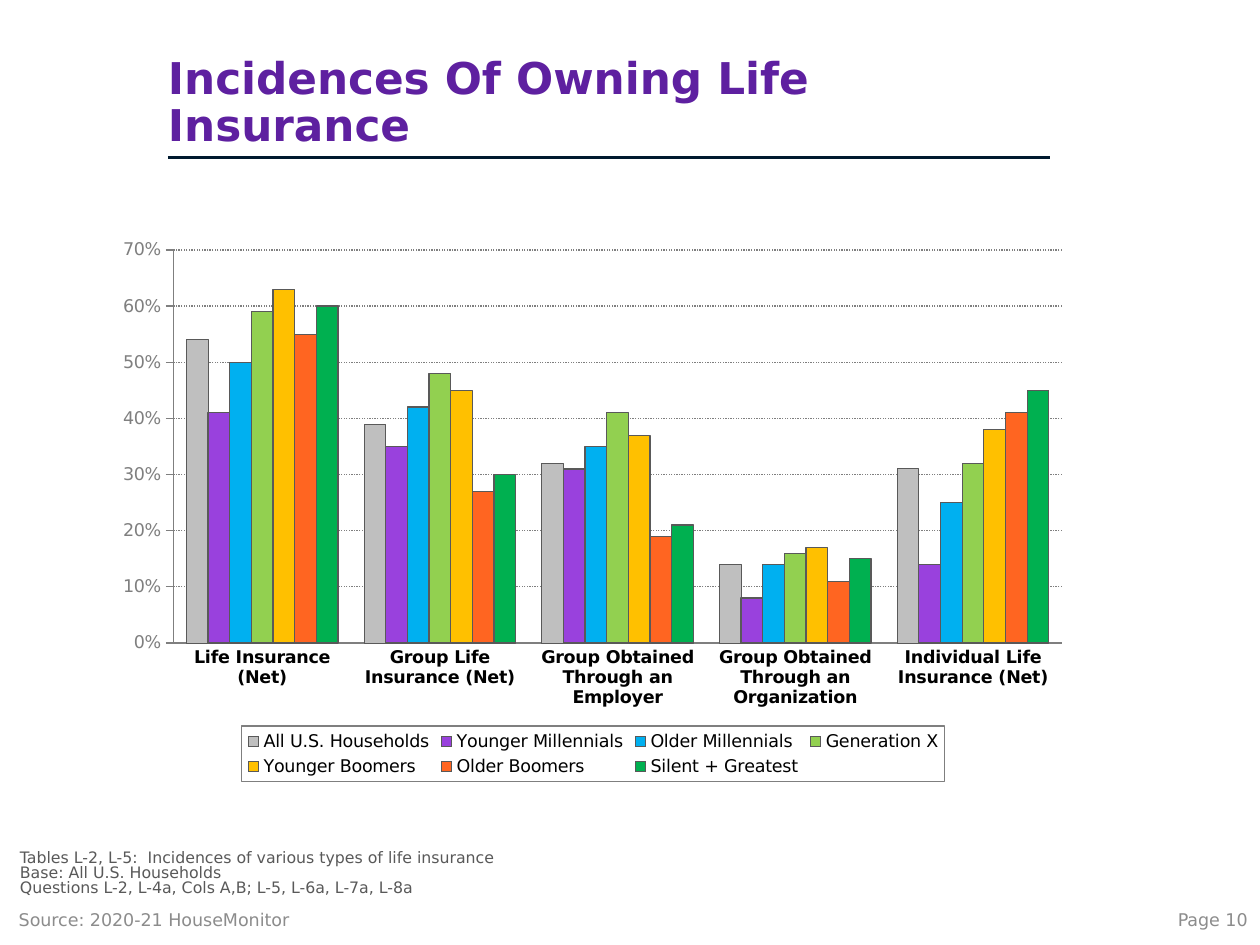
from pptx import Presentation
from pptx.chart.data import CategoryChartData
from pptx.dml.color import RGBColor
from pptx.enum.chart import XL_CHART_TYPE, XL_LEGEND_POSITION, XL_TICK_MARK
from pptx.enum.dml import MSO_LINE
from pptx.enum.shapes import MSO_CONNECTOR
from pptx.enum.text import MSO_ANCHOR, PP_ALIGN
from pptx.oxml import parse_xml
from pptx.oxml.ns import nsdecls, qn
from pptx.util import Inches, Pt

COLUMNS = XL_CHART_TYPE.COLUMN_CLUSTERED
LEGEND_BOTTOM = XL_LEGEND_POSITION.BOTTOM
TICK_NONE, TICK_OUT = XL_TICK_MARK.NONE, XL_TICK_MARK.OUTSIDE
DOTTED = MSO_LINE.ROUND_DOT
STRAIGHT = MSO_CONNECTOR.STRAIGHT
MIDDLE, BOTTOM = MSO_ANCHOR.MIDDLE, MSO_ANCHOR.BOTTOM
LEFT, RIGHT = PP_ALIGN.LEFT, PP_ALIGN.RIGHT

PURPLE = RGBColor(0x5E, 0x20, 0xA0)
NAVY = RGBColor(0x00, 0x19, 0x2F)
BLACK = RGBColor(0x00, 0x00, 0x00)
DARK_GRAY = RGBColor(0x59, 0x59, 0x59)
AXIS_GRAY = RGBColor(0x7F, 0x7F, 0x7F)
FOOTER_GRAY = RGBColor(0x8C, 0x8C, 0x8C)

FONT = "DejaVu Sans"
GRID_COLS, GRID_ROWS = 120, 90

INSURANCE_TYPES = [
    "Life Insurance (Net)",
    "Group Life Insurance (Net)",
    "Group Obtained Through an Employer",
    "Group Obtained Through an Organization",
    "Individual Life Insurance (Net)",
]
GENERATIONS = [
    ("All U.S. Households", RGBColor(0xBF, 0xBF, 0xBF), (0.54, 0.39, 0.32, 0.14, 0.31)),
    ("Younger Millennials", RGBColor(0x99, 0x41, 0xDD), (0.41, 0.35, 0.31, 0.08, 0.14)),
    ("Older Millennials", RGBColor(0x00, 0xB0, 0xF0), (0.50, 0.42, 0.35, 0.14, 0.25)),
    ("Generation X", RGBColor(0x92, 0xD0, 0x50), (0.59, 0.48, 0.41, 0.16, 0.32)),
    ("Younger Boomers", RGBColor(0xFF, 0xC0, 0x00), (0.63, 0.45, 0.37, 0.17, 0.38)),
    ("Older Boomers", RGBColor(0xFF, 0x65, 0x21), (0.55, 0.27, 0.19, 0.11, 0.41)),
    ("Silent + Greatest", RGBColor(0x00, 0xB0, 0x50), (0.60, 0.30, 0.21, 0.15, 0.45)),
]
TABLE_NOTES = [
    "Tables L-2, L-5:  Incidences of various types of life insurance",
    "Base: All U.S. Households",
    "Questions L-2, L-4a, Cols A,B; L-5, L-6a, L-7a, L-8a",
]


def style_font(font, size, color, bold=False):
    font.name, font.size, font.bold = FONT, Pt(size), bold
    font.color.rgb = color


def style_line(line, color, width=0.75):
    line.color.rgb = color
    line.width = Pt(width)


def manual_layout(x, y, w, h, inner=False):
    """Chart layout element, given as shares of the chart's size."""
    target = '<c:layoutTarget val="inner"/>' if inner else ""
    return parse_xml(
        f'<c:layout {nsdecls("c")}><c:manualLayout>{target}'
        '<c:xMode val="edge"/><c:yMode val="edge"/>'
        f'<c:x val="{x}"/><c:y val="{y}"/><c:w val="{w}"/><c:h val="{h}"/>'
        '</c:manualLayout></c:layout>')


def drop_layout(element):
    for layout in element.findall(qn("c:layout")):
        element.remove(layout)


class SlideBuilder:
    """Places elements on a grid of 120 columns by 90 rows."""

    def __init__(self, presentation):
        self.col = presentation.slide_width / GRID_COLS
        self.row = presentation.slide_height / GRID_ROWS
        self.slide = presentation.slides.add_slide(presentation.slide_layouts[6])

    def cells(self, col, row, cols, rows):
        return (round(col * self.col), round(row * self.row),
                round(cols * self.col), round(rows * self.row))

    def text(self, place, lines, size, color, bold=False, anchor=MIDDLE,
             align=LEFT, spacing=1.0, insets=(0.1, 0.05)):
        frame = self.slide.shapes.add_textbox(*self.cells(*place)).text_frame
        frame.word_wrap = True
        frame.vertical_anchor = anchor
        frame.margin_left = frame.margin_right = Inches(insets[0])
        frame.margin_top = frame.margin_bottom = Inches(insets[1])
        frame.text = "\n".join(lines)
        for paragraph in frame.paragraphs:
            paragraph.alignment = align
            paragraph.line_spacing = spacing
            style_font(paragraph.font, size, color, bold)

    def rule(self, col, row, cols, color, width):
        x, y, length, _ = self.cells(col, row, cols, 0)
        rule = self.slide.shapes.add_connector(STRAIGHT, x, y, x + length, y)
        style_line(rule.line, color, width)
        rule._element.spPr.append(parse_xml(f'<a:effectLst {nsdecls("a")}/>'))

    def column_chart(self, place, categories, groups):
        data = CategoryChartData(number_format="0%")
        data.categories = categories
        for name, _, shares in groups:
            data.add_series(name, shares)
        chart = self.slide.shapes.add_chart(COLUMNS, *self.cells(*place), data).chart
        chart.has_title = False
        style_font(chart.font, 10, BLACK)

        plot = chart.plots[0]
        plot.gap_width, plot.overlap = 120, 0
        plot.vary_by_categories = False
        for series, (_, color, _) in zip(plot.series, groups):
            series.format.fill.solid()
            series.format.fill.fore_color.rgb = color
            series.invert_if_negative = False
            style_line(series.format.line, DARK_GRAY)
        style_line(plot.series[0].format.line, DARK_GRAY, 0.5)

        self.style_axes(chart)
        plot_area = chart._chartSpace.chart.plotArea
        drop_layout(plot_area)
        plot_area.insert(0, manual_layout(0.07, 0.04, 0.91, 0.71, inner=True))
        self.add_legend(chart)

    def style_axes(self, chart):
        for axis, color, bold, tick in (
                (chart.category_axis, BLACK, True, TICK_NONE),
                (chart.value_axis, AXIS_GRAY, False, TICK_OUT)):
            style_font(axis.tick_labels.font, 10, color, bold)
            style_line(axis.format.line, AXIS_GRAY)
            axis.major_tick_mark, axis.minor_tick_mark = tick, TICK_NONE
        shares = chart.value_axis
        shares.minimum_scale, shares.maximum_scale, shares.major_unit = 0, 0.7, 0.1
        shares.tick_labels.number_format = "0%"
        shares.tick_labels.number_format_is_linked = False
        shares.has_major_gridlines = True
        style_line(shares.major_gridlines.format.line, AXIS_GRAY)
        shares.major_gridlines.format.line.dash_style = DOTTED

    def add_legend(self, chart):
        chart.has_legend = True
        legend = chart.legend
        legend.position = LEGEND_BOTTOM
        legend.include_in_layout = False
        style_font(legend.font, 10, BLACK)
        element = legend._element
        drop_layout(element)
        element.find(qn("c:legendPos")).addnext(manual_layout(0.14, 0.9, 0.72, 0.1))
        element.find(qn("c:txPr")).addprevious(parse_xml(
            f'<c:spPr {nsdecls("c", "a")}><a:ln w="{Pt(0.75)}"><a:solidFill>'
            f'<a:srgbClr val="{AXIS_GRAY}"/></a:solidFill></a:ln></c:spPr>'))


def main():
    presentation = Presentation()
    presentation.slide_width, presentation.slide_height = Inches(10), Inches(7.5)
    builder = SlideBuilder(presentation)

    builder.rule(16, 15, 84, NAVY, 2)
    builder.text((16, 4.8, 84, 10.2), ["Incidences Of Owning Life Insurance"], 25, PURPLE,
                 bold=True, anchor=BOTTOM, spacing=0.9, insets=(0, 0.05))
    builder.column_chart((10, 21.7, 93, 52.8), INSURANCE_TYPES, GENERATIONS)
    builder.text((1.9, 81.1, 116.5, 4.3), TABLE_NOTES, 9, DARK_GRAY,
                 anchor=BOTTOM, spacing=0.8, insets=(0, 0))
    builder.text((0.6, 85.2, 40, 4.8), ["Source: 2020-21 HouseMonitor"], 10, FOOTER_GRAY)
    builder.text((93, 85.2, 27, 4.8), ["Page 10"], 10, FOOTER_GRAY, align=RIGHT)

    presentation.save("out.pptx")


if __name__ == "__main__":
    main()
